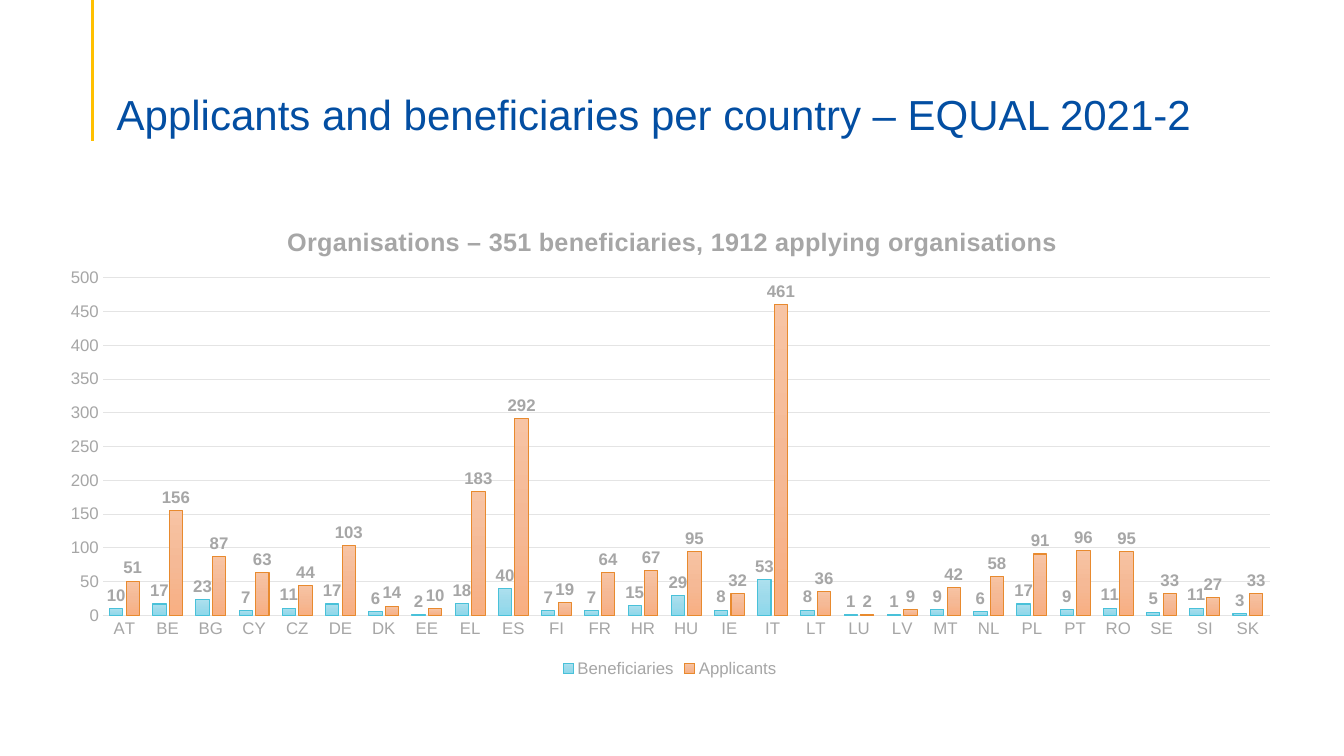
from copy import deepcopy

from lxml import etree
from pptx import Presentation
from pptx.chart.data import CategoryChartData
from pptx.dml.color import RGBColor
from pptx.enum.chart import XL_CHART_TYPE as Kind
from pptx.enum.chart import XL_LABEL_POSITION as Spot
from pptx.enum.chart import XL_LEGEND_POSITION as Side
from pptx.enum.chart import XL_TICK_MARK as Tick
from pptx.enum.shapes import MSO_CONNECTOR as Wire
from pptx.enum.text import MSO_ANCHOR as Anchor
from pptx.oxml.ns import qn
from pptx.util import Inches, Pt

GREY, PALE = "A6A6A6", "E4E4E4"
LANDS = ("AT BE BG CY CZ DE DK EE EL ES FI FR HR HU "
         "IE IT LT LU LV MT NL PL PT RO SE SI SK").split()
# name, values, gradient colours, outline
SERIES = [
    ("Beneficiaries",
     [10, 17, 23, 7, 11, 17, 6, 2, 18, 40, 7, 7, 15, 29,
      8, 53, 8, 1, 1, 9, 6, 17, 9, 11, 5, 11, 3],
     ("ACE0EE", "9DDAEB", "8BD8EB"), "49C1D9"),
    ("Applicants",
     [51, 156, 87, 63, 44, 103, 14, 10, 183, 292, 19, 64, 67, 95,
      32, 461, 36, 2, 9, 42, 58, 91, 96, 95, 33, 27, 33],
     ("F7C4A4", "F5B996", "F8AF82"), "E88A2E"),
]


def rgb(code):
    return RGBColor.from_string(code)


def style(font, size, color, bold=False):
    font.name = "Arial"
    font.size = Pt(size)
    font.bold = bold
    font.color.rgb = rgb(color)


def stroke(line, color, width):
    line.color.rgb = rgb(color)
    line.width = Pt(width)


def add_rule(slide):
    x = Inches(0.92)
    rule = slide.shapes.add_connector(Wire.STRAIGHT, x, 0, x, Inches(1.4))
    stroke(rule.line, "FFC000", 2.25)
    etree.SubElement(rule._element.spPr, qn("a:effectLst"))


def add_title(slide, text):
    box = slide.shapes.add_textbox(
        Inches(1.06), Inches(0.53), Inches(11.5), Inches(0.86))
    frame = box.text_frame
    frame.word_wrap = True
    frame.vertical_anchor = Anchor.BOTTOM
    frame.margin_bottom = 0
    para = frame.paragraphs[0]
    para.text = text
    para.line_spacing = 0.9
    style(para.font, 30, "034EA2")


def place(part, index, **spots):
    """Fix a chart part at fractions of the chart area."""
    for old in part.findall(qn("c:layout")):
        part.remove(old)
    layout = etree.Element(qn("c:layout"))
    manual = etree.SubElement(layout, qn("c:manualLayout"))
    if "w" in spots:
        etree.SubElement(manual, qn("c:layoutTarget"), val="inner")
    for key in "xy":
        etree.SubElement(manual, qn(f"c:{key}Mode"), val="edge")
    for key, value in spots.items():
        etree.SubElement(manual, qn(f"c:{key}"), val=str(value))
    part.insert(index, layout)


def shade(fill, colors):
    """Fill from top to bottom with three evenly spaced colours."""
    fill.gradient()
    fill.gradient_angle = 270
    first = fill.gradient_stops[0]._gs
    first.addnext(deepcopy(first))
    for i, (stop, color) in enumerate(zip(fill.gradient_stops, colors)):
        stop.position = i / 2
        stop.color.rgb = rgb(color)


def set_axes(chart):
    for axis in (chart.category_axis, chart.value_axis):
        axis.major_tick_mark = axis.minor_tick_mark = Tick.NONE
        style(axis.tick_labels.font, 12, GREY)
    stroke(chart.category_axis.format.line, PALE, 0.75)
    values = chart.value_axis
    values.minimum_scale, values.maximum_scale = 0, 500
    values.major_unit = 50
    values.format.line.fill.background()
    stroke(values.major_gridlines.format.line, PALE, 0.75)


def set_bars(plot):
    plot.gap_width = 100
    plot.overlap = -24
    plot.vary_by_categories = False
    for bars, (_, _, colors, edge) in zip(plot.series, SERIES):
        shade(bars.format.fill, colors)
        stroke(bars.format.line, edge, 0.75)
        labels = bars.data_labels
        labels.show_value = True
        labels.position = Spot.OUTSIDE_END
        labels.number_format = "0"
        labels.number_format_is_linked = False
        style(labels.font, 12, GREY, True)


def add_chart(slide, text):
    data = CategoryChartData(number_format="0")
    data.categories = LANDS
    for name, values, _, _ in SERIES:
        data.add_series(name, values)
    chart = slide.shapes.add_chart(
        Kind.COLUMN_CLUSTERED, Inches(0.45), Inches(2),
        Inches(12.39), Inches(4.76), data).chart
    style(chart.font, 10, "4D4D4D")
    title = chart.chart_title
    para = title.text_frame.paragraphs[0]
    para.text = text
    style(para.font, 18, GREY, True)
    para.runs[0]._r.get_or_add_rPr().set("spc", "20")
    place(title._element, 1, x=0.19, y=0.04)
    chart.has_legend = True
    chart.legend.position = Side.BOTTOM
    chart.legend.include_in_layout = False
    style(chart.legend.font, 12, GREY)
    set_axes(chart)
    set_bars(chart.plots[0])
    area = chart._chartSpace.find(".//" + qn("c:plotArea"))
    place(area, 0, x=0.046, y=0.159, w=0.934, h=0.704)


def main():
    deck = Presentation()
    deck.slide_width, deck.slide_height = Inches(13.33), Inches(7.5)
    slide = deck.slides.add_slide(deck.slide_layouts[6])
    add_rule(slide)
    add_chart(slide, "Organisations – 351 beneficiaries, "
                     "1912 applying organisations")
    add_title(slide, "Applicants and beneficiaries per country – EQUAL 2021-2")
    deck.save("out.pptx")


if __name__ == "__main__":
    main()
